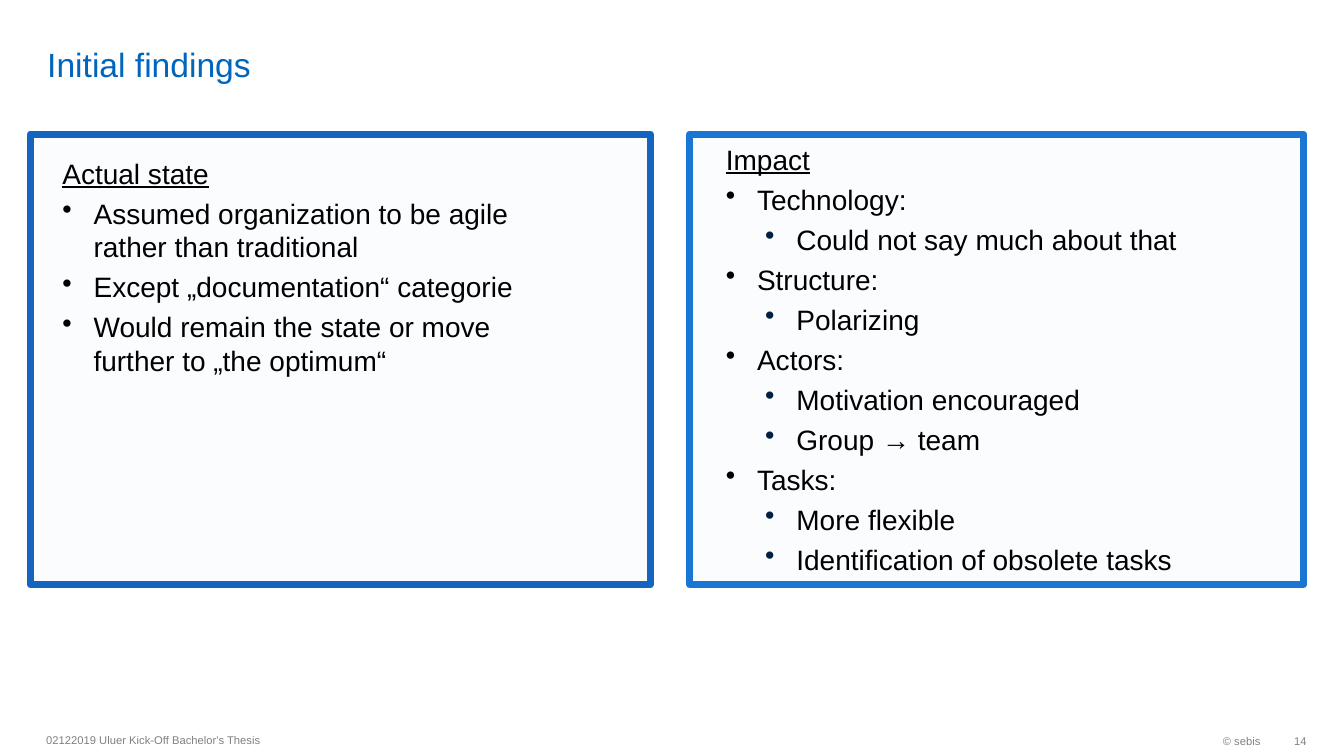
import pptx
import pptx.dml.color
import pptx.enum.shapes
import pptx.enum.text
import pptx.util
from lxml import etree
from pptx.oxml.ns import qn

Inches, Pt = pptx.util.Inches, pptx.util.Pt
ANCHOR, ALIGN = pptx.enum.text.MSO_ANCHOR, pptx.enum.text.PP_ALIGN

COLORS = {"title": "0065BD", "body": "000000", "footer": "808080", "sub_bullet": "002143"}
PANEL_TOP, PANEL_HEIGHT = 1.33, 4.47

# Points are (level, text)
PANELS = [
    {
        "left": 6.84, "width": 6.09, "fill": "CEE4F9", "border": "1976D2",
        "text_box": (7.1, 1.36, 5.51, 3.76),
        "heading": "Impact",
        "points": [
            (0, "Technology:"),
            (1, "Could not say much about that"),
            (0, "Structure:"),
            (1, "Polarizing"),
            (0, "Actors:"),
            (1, "Motivation encouraged"),
            (1, "Group → team"),
            (0, "Tasks:"),
            (1, "More flexible"),
            (1, "Identification of obsolete tasks"),
        ],
    },
    {
        "left": 0.3, "width": 6.15, "fill": "C9E0F9", "border": "1565C0",
        "text_box": (0.52, 1.5, 4.73, 2.13),
        "heading": "Actual state",
        "points": [
            (0, "Assumed organization to be agile rather than traditional"),
            (0, "Except „documentation“ categorie"),
            (0, "Would remain the state or move further to „the optimum“"),
        ],
    },
]
FOOTERS = [
    ("02122019 Uluer Kick-Off Bachelor's Thesis", (0.36, 7.18, 6.3, 0.32), ALIGN.LEFT, 0.1),
    ("© sebis", (10.26, 7.19, 2.34, 0.32), ALIGN.RIGHT, 0.1),
    ("14", (12.6, 7.19, 0.36, 0.32), ALIGN.RIGHT, 0),
]


def rgb(hex_color):
    return pptx.dml.color.RGBColor.from_string(hex_color)


def add_bullet(paragraph, level):
    properties = paragraph._p.get_or_add_pPr()
    properties.set("marL", str(Inches((0.31, 0.7)[level])))
    properties.set("indent", str(Inches(-0.31)))
    if level:
        bullet_color = etree.SubElement(properties, qn("a:buClr"))
        etree.SubElement(bullet_color, qn("a:srgbClr"), val=COLORS["sub_bullet"])
    etree.SubElement(properties, qn("a:buChar"), char="•")
    paragraph.level = level


def add_text(slide, text, box, size, color, anchor=ANCHOR.TOP, align=ALIGN.LEFT,
             right=0.1, vertical=0.05, underline=False, points=()):
    """Add a text box with a first line and bulleted (level, text) points under it."""
    frame = slide.shapes.add_textbox(*map(Inches, box)).text_frame
    frame.word_wrap = True
    frame.vertical_anchor = anchor
    frame.margin_left, frame.margin_right = Inches(0.1), Inches(right)
    frame.margin_top = frame.margin_bottom = Inches(vertical)
    for index, (level, line) in enumerate([(None, text), *points]):
        paragraph = frame.add_paragraph() if index else frame.paragraphs[0]
        if index:
            add_bullet(paragraph, level)
            paragraph.space_before = Pt(4.6)
        paragraph.alignment = align
        run = paragraph.add_run()
        run.text = line
        run.font.name, run.font.size = "Arial", Pt(size)
        run.font.color.rgb = rgb(color)
        run.font.underline = underline and not index


def add_panel(slide, panel):
    frame = slide.shapes.add_shape(
        pptx.enum.shapes.MSO_SHAPE.RECTANGLE, Inches(panel["left"]), Inches(PANEL_TOP),
        Inches(panel["width"]), Inches(PANEL_HEIGHT))
    frame.shadow.inherit = False
    frame.fill.solid()
    frame.fill.fore_color.rgb = rgb(panel["fill"])
    fill_color = frame._element.spPr.find(qn("a:solidFill")).find(qn("a:srgbClr"))
    etree.SubElement(fill_color, qn("a:alpha"), val="8000")
    frame.line.color.rgb = rgb(panel["border"])
    frame.line.width = Pt(5)


def main():
    deck = pptx.Presentation()
    deck.slide_width, deck.slide_height = Inches(13.33), Inches(7.5)
    slide = deck.slides.add_slide(deck.slide_layouts[6])
    for panel in PANELS:
        add_panel(slide, panel)
        add_text(slide, panel["heading"], panel["text_box"], 20, COLORS["body"],
                 underline=True, points=panel["points"])
    add_text(slide, "Initial findings", (0.37, 0.05, 11.58, 0.79), 24, COLORS["title"],
             anchor=ANCHOR.BOTTOM, vertical=0)
    for text, box, align, right in FOOTERS:
        add_text(slide, text, box, 8, COLORS["footer"], anchor=ANCHOR.MIDDLE,
                 align=align, right=right)
    deck.save("out.pptx")


if __name__ == "__main__":
    main()
